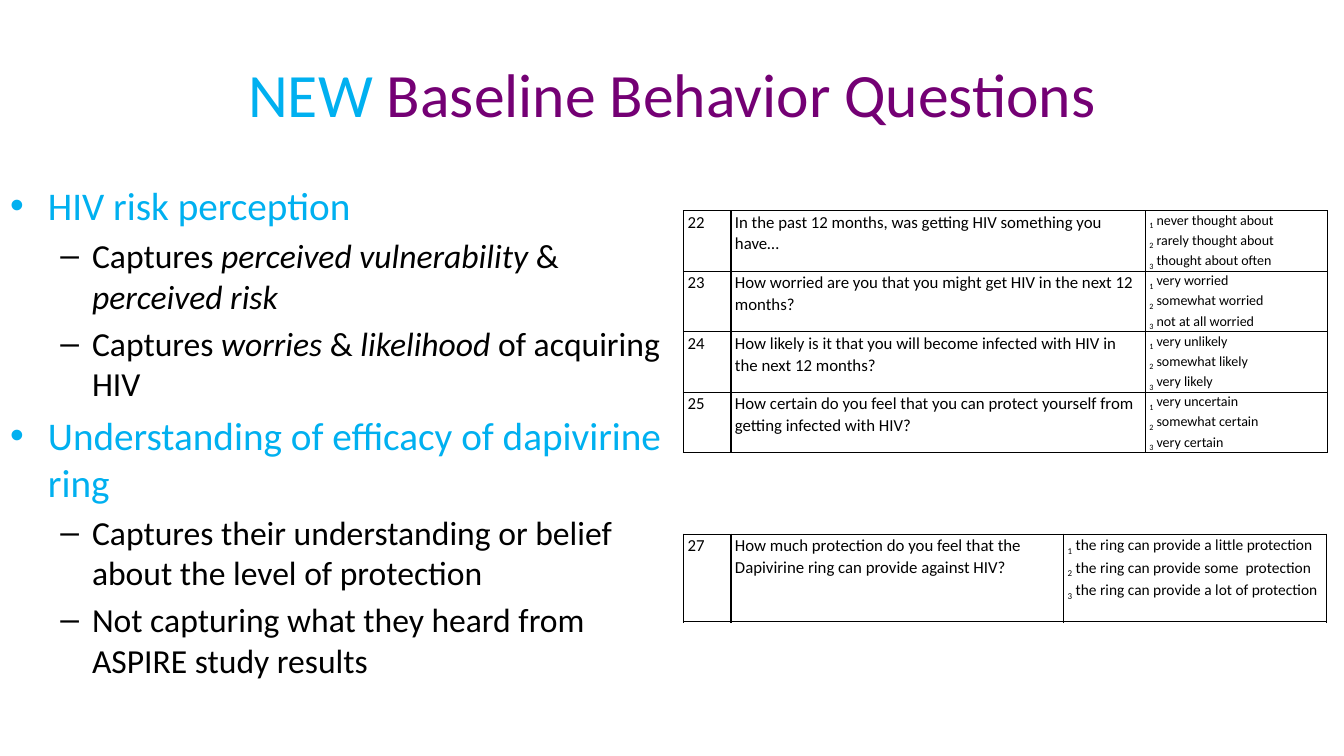
"""Build the slide on new baseline behavior questions."""
import pptx
import pptx.dml.color
import pptx.enum.text
import pptx.oxml
import pptx.oxml.ns
import pptx.util

Inches = pptx.util.Inches
Pt = pptx.util.Pt

THEME = {
    "font": "Calibri",
    "accent": "00B0F0",
    "title": "740074",
    "text": "000000",
    "title_size": 44,
    "topic_size": 28,
    "detail_size": 24,
    "question_size": 12,
    "choice_size": 10,
    "ring_choice_size": 11,
}


def add_run(p, text, size, color="text", italic=False, baseline=None):
    r = p.add_run()
    r.text = text
    style = {"name": THEME["font"], "size": Pt(THEME[size]), "italic": italic}
    for key, value in style.items():
        setattr(r.font, key, value)
    r.font.color.rgb = pptx.dml.color.RGBColor.from_string(THEME[color])
    if baseline:
        r._r.get_or_add_rPr().set("baseline", str(baseline * 1000))


def add_question_table(s, top, widths, row_height, rows, choice_size):
    frame = s.shapes.add_table(len(rows), 3, Inches(6.78), Inches(top),
                               Inches(sum(widths)), Inches(row_height * len(rows)))
    table = frame.table
    table.first_row = False
    table.horz_banding = False
    for column, width in zip(table.columns, widths):
        column.width = Inches(width)
    for row, (number, question, choices) in zip(table.rows, rows):
        row.height = Inches(row_height)
        for cell in row.cells:
            margins = {"margin_left": 0.04, "margin_right": 0.04, "margin_top": 0, "margin_bottom": 0}
            for key, value in margins.items():
                setattr(cell, key, Inches(value))
            cell.fill.background()
            for i, side in enumerate(("lnL", "lnR", "lnT", "lnB")):
                border = pptx.oxml.parse_xml(
                    f'<a:{side} {pptx.oxml.ns.nsdecls("a")} w="12700"><a:solidFill>'
                    f'<a:srgbClr val="{THEME["text"]}"/></a:solidFill></a:{side}>')
                cell._tc.get_or_add_tcPr().insert(i, border)
        for cell, text in zip(row.cells, (number, question)):
            p = cell.text_frame.paragraphs[0]
            p.line_spacing = 1.07
            add_run(p, text, "question_size")
        tf = row.cells[2].text_frame
        for i, choice in enumerate(choices):
            p = tf.add_paragraph() if i else tf.paragraphs[0]
            p.line_spacing = 1.07
            add_run(p, str(i + 1), choice_size, baseline=-25)
            add_run(p, " " + choice, choice_size)


prs = pptx.Presentation()
prs.slide_width = Inches(13.33)
prs.slide_height = Inches(7.5)
s = prs.slides.add_slide(prs.slide_layouts[1])
title, body = s.placeholders

places = ((title, (0.67, 0.3, 12, 1.25)), (body, (0, 1.75, 6.67, 5.43)))
for sp, place in places:
    for key, value in zip(("left", "top", "width", "height"), place):
        setattr(sp, key, Inches(value))
    sp.text_frame.auto_size = pptx.enum.text.MSO_AUTO_SIZE.NONE

p = title.text_frame.paragraphs[0]
add_run(p, "NEW", "title_size", "accent")
add_run(p, " Baseline Behavior Questions", "title_size", "title")

points = [
    (0, [("HIV risk perception", False)]),
    (1, [("Captures ", False), ("perceived vulnerability ", True), ("& ", False),
         ("perceived risk", True)]),
    (1, [("Captures ", False), ("worries", True), (" & ", False), ("likelihood", True),
         (" of acquiring HIV", False)]),
    (0, [("Understanding of efficacy of dapivirine ring", False)]),
    (1, [("Captures their understanding or belief about the level of protection", False)]),
    (1, [("Not capturing what they heard from ASPIRE study results", False)]),
]
level_styles = (("topic_size", "accent"), ("detail_size", "text"))
tf = body.text_frame
for i, (level, parts) in enumerate(points):
    p = tf.add_paragraph() if i else tf.paragraphs[0]
    p.level = level
    if i == 0:
        p.space_before = Pt(0)
    for text, italic in parts:
        add_run(p, text, *level_styles[level], italic=italic)

risk_questions = [
    ("22", "In the past 12 months, was getting HIV something you have…",
     ("never thought about", "rarely thought about", "thought about often")),
    ("23", "How worried are you that you might get HIV in the next 12 months?",
     ("very worried", "somewhat worried", "not at all worried")),
    ("24", "How likely is it that you will become infected with HIV in the next 12 months?",
     ("very unlikely", "somewhat likely", "very likely")),
    ("25", "How certain do you feel that you can protect yourself from getting infected with HIV?",
     ("very uncertain", "somewhat certain", "very certain")),
]
ring_questions = [
    ("27", "How much protection do you feel that the Dapivirine ring can provide against HIV?",
     ("the ring can provide a little protection", "the ring can provide some  protection",
      "the ring can provide a lot of protection")),
]
add_question_table(s, 2.09, (0.47, 4.11, 1.81), 0.6, risk_questions, "choice_size")
add_question_table(s, 5.3, (0.47, 3.3, 2.61), 0.87, ring_questions, "ring_choice_size")

prs.save("out.pptx")
